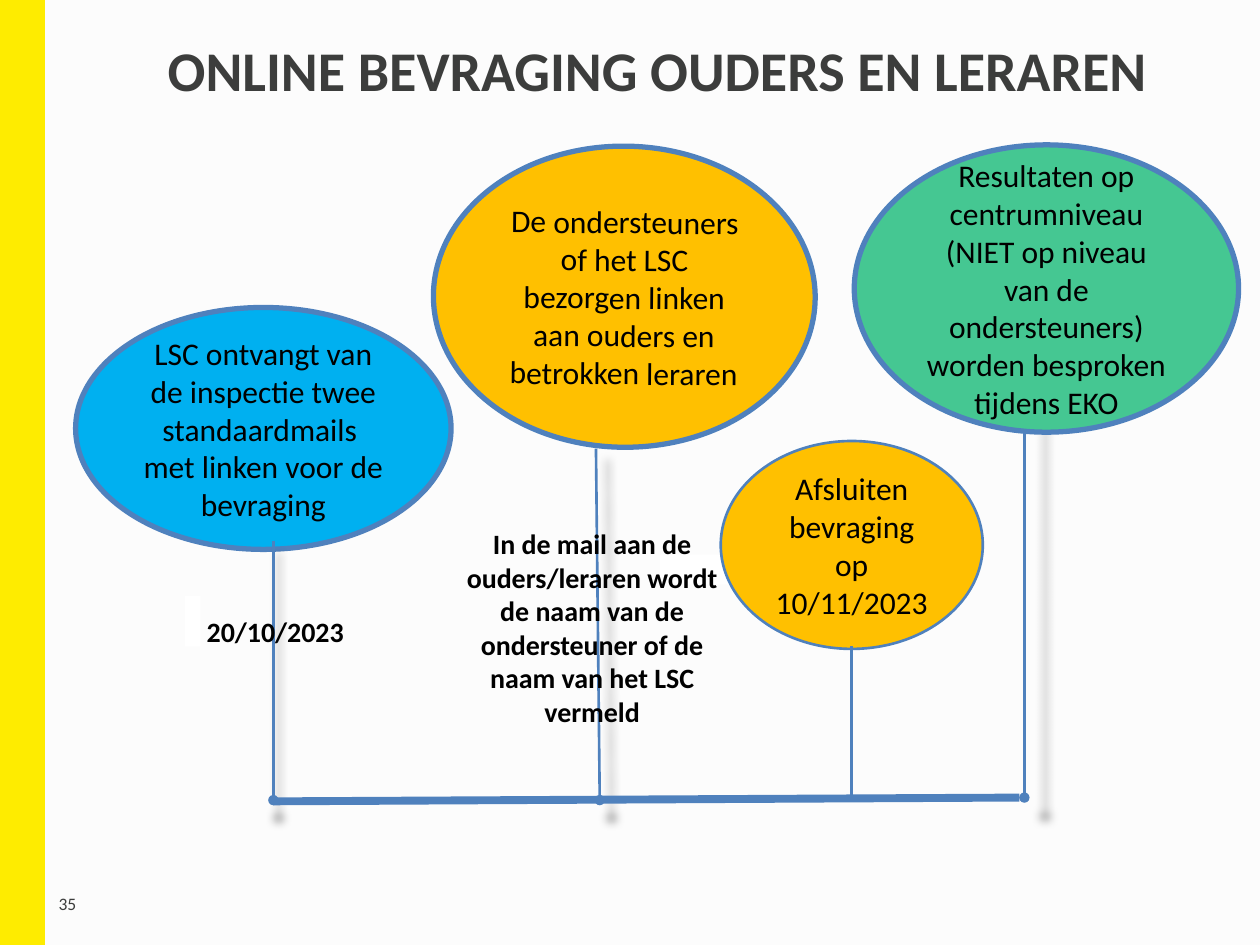
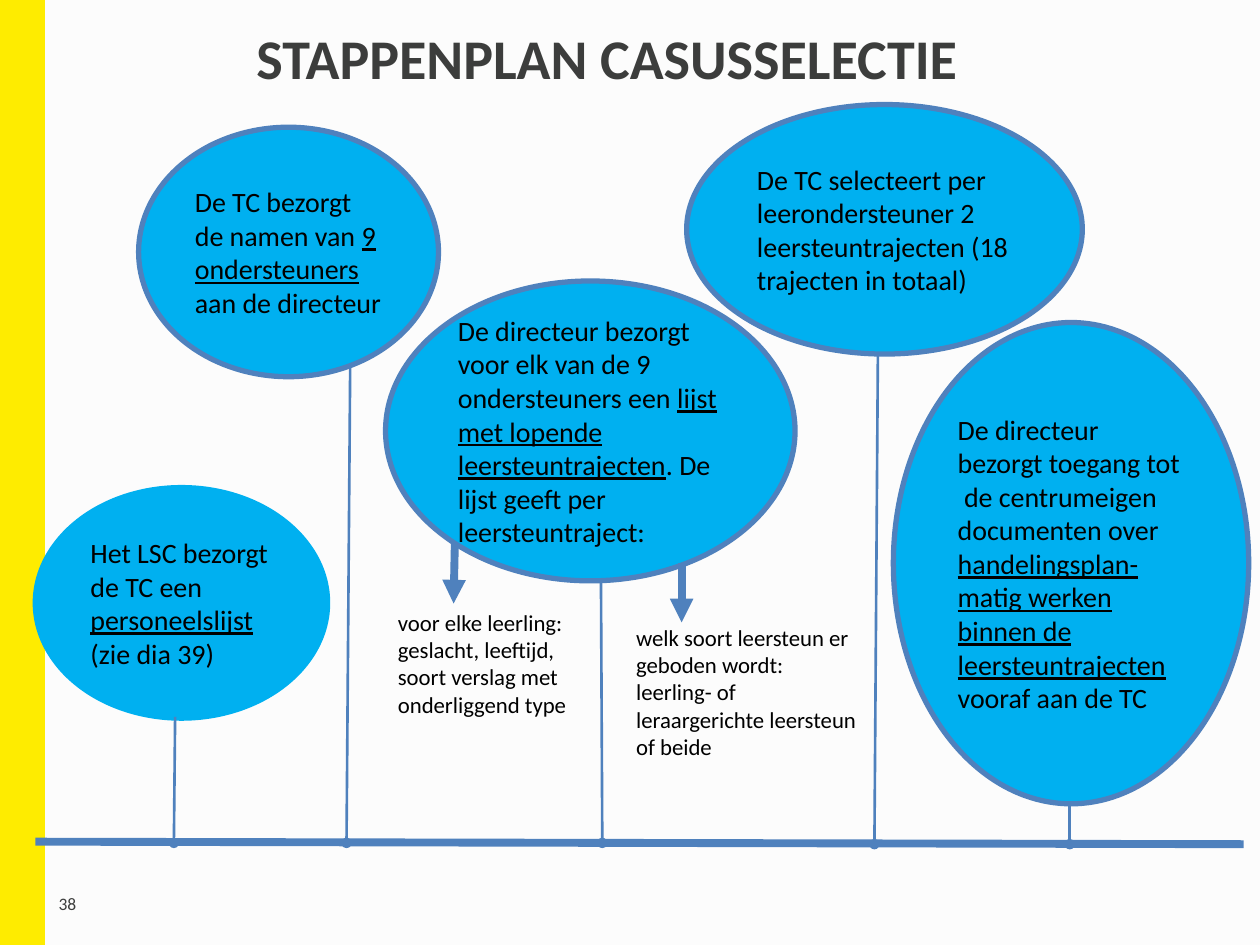
from dataclasses import dataclass
from typing import Optional, Union

from lxml import etree
from pptx import Presentation, dml
from pptx import util as u
from pptx.dml import color
from pptx.enum import shapes, text
from pptx.oxml import ns

PX = 9144
FONT = "Calibri"
HUES = {
    "back": "FCFCFC",
    "band": "FEEC00",
    "ink": "3C3D3C",
    "black": "000000",
    "white": "FFFFFF",
    "line": "4F81BD",
    "blue": "00B0F0",
    "gold": "FFC000",
    "green": "45C792",
}


@dataclass(frozen=True)
class Part:
    words: str
    under: bool = False


Words = Union[str, tuple[Part, ...]]
Lines = tuple[Words, ...]
Box = tuple[int, int, int, int]


@dataclass(frozen=True)
class Style:
    size: int
    hue: str = "black"
    bold: bool = False
    mid: bool = True
    tight: bool = False


@dataclass(frozen=True)
class Bubble:
    box: Box
    hue: str
    lines: Lines
    style: Style
    edge: str = "line"
    width: float = 3
    turn: float = 0


@dataclass(frozen=True)
class Patch:
    box: Box
    hue: str
    edge: Optional[str] = None


@dataclass(frozen=True)
class Note:
    box: Box
    lines: Lines
    style: Style
    grow: bool = True


@dataclass(frozen=True)
class Stem:
    ends: Box
    tail: Optional[str] = "oval"
    width: float = 1.5
    shade: bool = False


Item = Union[Bubble, Patch, Note, Stem]

TITLE = Style(32, "ink", bold=True, tight=True)
PAGE = Style(10, "ink")
LARGE = Style(18)
STEP = Style(16, mid=False)
BOLD = Style(16, bold=True)
SMALL = Style(13, mid=False)


def rgb(hue: str) -> color.RGBColor:
    return color.RGBColor.from_string(HUES[hue])


def emu(box: Box) -> list[u.Emu]:
    return [u.Emu(n * PX) for n in box]


def write(frame, lines: Lines, style: Style) -> None:
    frame.word_wrap = True
    for i, line in enumerate(lines):
        para = frame.paragraphs[0] if i == 0 else frame.add_paragraph()
        para.alignment = text.PP_ALIGN.CENTER if style.mid else text.PP_ALIGN.LEFT
        if style.tight:
            para.line_spacing = 0.9
            para.space_after = u.Pt(6)
        for part in (Part(line),) if isinstance(line, str) else line:
            run = para.add_run()
            run.text = part.words
            font = run.font
            font.name, font.size, font.bold = FONT, u.Pt(style.size), style.bold
            font.underline = part.under
            font.color.rgb = rgb(style.hue)


def paint(shape, hue: str, edge: Optional[str], width: float) -> None:
    shape.shadow.inherit = False
    shape.fill.solid()
    shape.fill.fore_color.rgb = rgb(hue)
    if edge is None:
        shape.line.fill.background()
    else:
        shape.line.color.rgb = rgb(edge)
        shape.line.width = u.Pt(width)


def draw_bubble(slide, item: Bubble) -> None:
    shape = slide.shapes.add_shape(shapes.MSO_SHAPE.OVAL, *emu(item.box))
    paint(shape, item.hue, item.edge, item.width)
    shape.rotation = item.turn
    shape.text_frame.vertical_anchor = text.MSO_ANCHOR.MIDDLE
    write(shape.text_frame, item.lines, item.style)


def draw_patch(slide, item: Patch) -> None:
    shape = slide.shapes.add_shape(shapes.MSO_SHAPE.RECTANGLE, *emu(item.box))
    paint(shape, item.hue, item.edge, 1.5)


def draw_note(slide, item: Note) -> None:
    frame = slide.shapes.add_textbox(*emu(item.box)).text_frame
    write(frame, item.lines, item.style)
    if item.grow:
        frame.auto_size = text.MSO_AUTO_SIZE.SHAPE_TO_FIT_TEXT
    else:
        frame.vertical_anchor = text.MSO_ANCHOR.MIDDLE


def add(node, tag: str, **attrs: str):
    return etree.SubElement(node, ns.qn(tag), attrs)


def draw_stem(slide, item: Stem) -> None:
    stem = slide.shapes.add_connector(shapes.MSO_CONNECTOR.STRAIGHT, *emu(item.ends))
    stem.line.color.rgb = rgb("line")
    stem.line.width = u.Pt(item.width)
    props = stem.element.spPr
    if item.tail:
        add(props.find(ns.qn("a:ln")), "a:tailEnd", type=item.tail)
    glow = add(props, "a:effectLst")
    if item.shade:
        cast = add(glow, "a:outerShdw", blurRad="63500", dist="12700", dir="5400000",
                   sx="102000", sy="102000", algn="ctr", rotWithShape="0")
        add(add(cast, "a:srgbClr", val=HUES["black"]), "a:alpha", val="32000")


DRAW = {Bubble: draw_bubble, Patch: draw_patch, Note: draw_note, Stem: draw_stem}


def build(deck, title: str, box: Box, page: str, items: list[Item]) -> None:
    slide = deck.slides.add_slide(deck.slide_layouts[6])
    fill = slide.background.fill
    fill.solid()
    fill.fore_color.rgb = rgb("back")
    frame = [
        Patch((0, 0, 35, 750), "band", "band"),
        Note((28, 697, 51, 40), (page,), PAGE, grow=False),
        Note(box, (title,), TITLE, grow=False),
    ]
    for item in frame + items:
        DRAW[type(item)](slide, item)


SURVEY: list[Item] = [
    Stem((473, 356, 476, 635), shade=True),
    Bubble((60, 244, 298, 192), "blue",
           ("LSC ontvangt van de inspectie twee standaardmails ",
            "met linken voor de bevraging"), LARGE),
    Stem((217, 429, 217, 635), shade=True),
    Stem((813, 286, 813, 633), shade=True),
    Patch((147, 473, 12, 40), "white"),
    Bubble((344, 116, 303, 239), "gold",
           ("De ondersteuners of het LSC bezorgen linken aan ouders en betrokken leraren",),
           LARGE, turn=0.5),
    Patch((524, 440, 123, 24), "white"),
    Bubble((678, 115, 305, 228), "green",
           ("Resultaten op centrumniveau (NIET op niveau van de ondersteuners) "
            "worden besproken tijdens EKO",), LARGE),
    Bubble((572, 350, 208, 165), "gold",
           ("Afsluiten bevraging op 10/11/2023",), LARGE, width=1.5),
    Stem((676, 513, 676, 635), tail=None),
    Stem((217, 636, 809, 633), tail=None, width=4.5),
    Note((353, 413, 234, 172),
         ("In de mail aan de ouders/leraren wordt de naam van de ondersteuner "
          "of de naam van het LSC vermeld",), BOLD),
    Note((128, 483, 181, 37), ("20/10/2023",), BOLD),
]

CASES: list[Item] = [
    Bubble((28, 387, 232, 183), "blue",
           ((Part("Het LSC bezorgt de TC een "), Part("personeelslijst", True)),
            "(zie dia 39)"), STEP, edge="blue"),
    Stem((139, 569, 138, 669)),
    Stem((278, 281, 275, 669)),
    Stem((477, 462, 478, 669)),
    Stem((697, 248, 694, 670)),
    Bubble((110, 101, 238, 198), "blue",
           ((Part("De TC bezorgt de namen van "), Part("9 ondersteuners", True),
             Part(" aan de directeur")),), STEP),
    Bubble((306, 223, 325, 238), "blue",
           ((Part("De directeur bezorgt voor elk van de 9 ondersteuners een "),
             Part("lijst met lopende leersteuntrajecten", True),
             Part(". De lijst geeft per leersteuntraject:")),), STEP),
    Bubble((545, 83, 314, 198), "blue",
           ("De TC selecteert per leerondersteuner 2 leersteuntrajecten "
            "(18 trajecten in totaal)",), STEP),
    Bubble((709, 256, 282, 382), "blue",
           ((Part("De directeur bezorgt toegang tot  de centrumeigen documenten over "),
             Part("handelingsplan-matig werken binnen de leersteuntrajecten ", True),
             Part("vooraf aan de TC")),), STEP),
    Note((306, 478, 167, 98),
         ("voor elke leerling: geslacht, leeftijd, soort verslag met onderliggend type",),
         SMALL),
    Note((495, 490, 199, 123),
         ("welk soort leersteun er geboden wordt: leerling- of "
          "leraargerichte leersteun of beide",), SMALL),
    Stem((361, 431, 360, 479), "triangle", 4.5),
    Stem((541, 447, 541, 494), "triangle", 4.5),
    Stem((849, 637, 849, 670)),
    Stem((28, 668, 987, 670), tail=None, width=4.5),
]


def main() -> None:
    deck = Presentation()
    deck.slide_width, deck.slide_height = u.Emu(1000 * PX), u.Emu(750 * PX)
    build(deck, "ONLINE BEVRAGING OUDERS EN LERAREN", (53, 11, 938, 94), "35", SURVEY)
    build(deck, "STAPPENPLAN CASUSSELECTIE", (15, 4, 934, 90), "38", CASES)
    deck.save("out.pptx")


if __name__ == "__main__":
    main()
